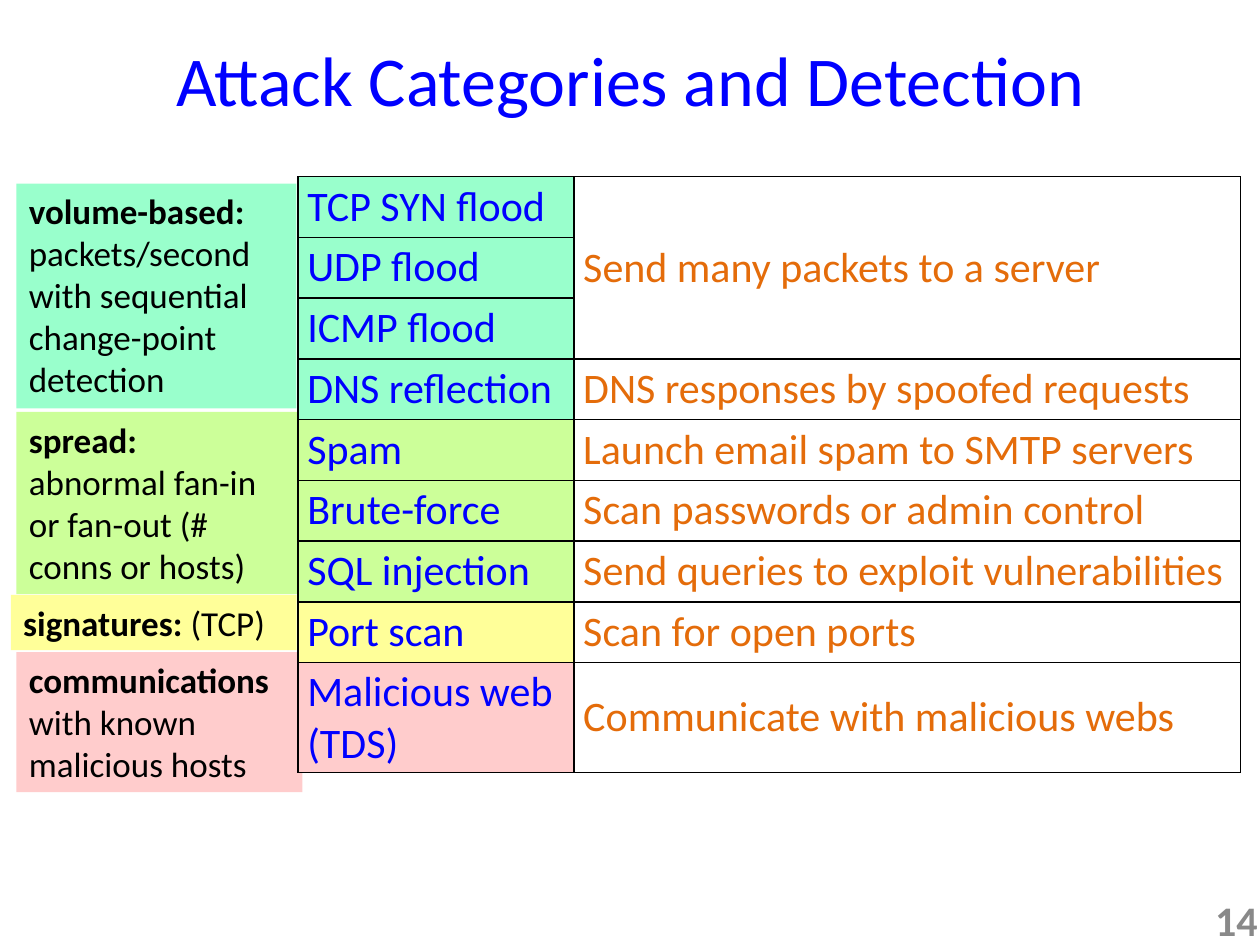
"""Build the slide on attack categories and how each is detected."""
from dataclasses import dataclass

from lxml import etree
from pptx import Presentation
from pptx.dml.color import RGBColor
from pptx.enum import text
from pptx.oxml import ns
from pptx.util import Pt


@dataclass(frozen=True)
class Theme:
    font: str = "Calibri"
    blue: str = "0000FF"
    orange: str = "E46C0A"
    black: str = "000000"
    grey: str = "898989"
    volume: str = "99FFCC"
    spread: str = "CCFF99"
    signature: str = "FFFF99"
    contact: str = "FFCCCC"
    title_size: int = 40
    table_size: int = 24
    method_size: int = 20


theme = Theme()


def style(paragraph, size, color, bold=None):
    paragraph.font.name = theme.font
    paragraph.font.size = Pt(size)
    paragraph.font.color.rgb = RGBColor.from_string(color)
    paragraph.font.bold = bold


def border(cell):
    properties = cell._tc.get_or_add_tcPr()
    for position, side in enumerate(("lnL", "lnR", "lnT", "lnB")):
        line = etree.Element(ns.qn(f"a:{side}"), w=str(Pt(1)))
        fill = etree.SubElement(line, ns.qn("a:solidFill"))
        etree.SubElement(fill, ns.qn("a:srgbClr"), val=theme.black)
        properties.insert(position, line)


deck = Presentation()
deck.slide_width, deck.slide_height = Pt(720), Pt(540)
slide = deck.slides.add_slide(deck.slide_layouts[5])

title = slide.shapes.title
title.left, title.top, title.width, title.height = Pt(0), Pt(0), Pt(720), Pt(90)
title.text_frame.text = "Attack Categories and Detection"
title.text_frame.vertical_anchor = text.MSO_ANCHOR.MIDDLE
title.text_frame.paragraphs[0].alignment = text.PP_ALIGN.CENTER
style(title.text_frame.paragraphs[0], theme.title_size, theme.blue)

methods = [
    (9.4, 105, 160, 128.4, theme.volume,
     [[("volume-based: ", True),
       ("packets/second with sequential change-point detection", False)]]),
    (9.4, 235.4, 163.4, 104.2, theme.spread,
     [[("spread:", True)], [("abnormal fan-in or fan-out (# conns or hosts)", False)]]),
    (6.2, 340, 163.4, 31.5, theme.signature,
     [[("signatures: ", True), ("(TCP)", False)]]),
    (9.4, 372.7, 163.4, 80, theme.contact,
     [[("communications ", True), ("with known malicious hosts", False)]]),
]
for left, top, width, height, color, lines in methods:
    method = slide.shapes.add_textbox(Pt(left), Pt(top), Pt(width), Pt(height))
    method.fill.solid()
    method.fill.fore_color.rgb = RGBColor.from_string(color)
    frame = method.text_frame
    frame.word_wrap = True
    frame.auto_size = text.MSO_AUTO_SIZE.SHAPE_TO_FIT_TEXT
    for index, line in enumerate(lines):
        paragraph = frame.add_paragraph() if index else frame.paragraphs[0]
        style(paragraph, theme.method_size, theme.black)
        for words, bold in line:
            run = paragraph.add_run()
            run.text = words
            run.font.bold = bold

attacks = [
    ("TCP SYN flood", "Send many packets to a server", theme.volume),
    ("UDP flood", "", theme.volume),
    ("ICMP flood", "", theme.volume),
    ("DNS reflection", "DNS responses by spoofed requests", theme.volume),
    ("Spam", "Launch email spam to SMTP servers", theme.spread),
    ("Brute-force", "Scan passwords or admin control", theme.spread),
    ("SQL injection", "Send queries to exploit vulnerabilities", theme.spread),
    ("Port scan", "Scan for open ports", theme.signature),
    ("Malicious web\n(TDS)", "Communicate with malicious webs", theme.contact),
]
table = slide.shapes.add_table(
    len(attacks), 2, Pt(170.4), Pt(101), Pt(538.6), Pt(336)).table
table.first_row = table.horz_banding = False
table.columns[0].width, table.columns[1].width = Pt(157.7), Pt(380.9)
for index, (attack, behavior, color) in enumerate(attacks):
    table.rows[index].height = Pt(58.4 if "\n" in attack else 34.7)
    name_cell, behavior_cell = table.cell(index, 0), table.cell(index, 1)
    for cell, words, ink in ((name_cell, attack, theme.blue),
                             (behavior_cell, behavior, theme.orange)):
        cell.text = words
        cell.margin_left = cell.margin_right = Pt(5.2)
        cell.margin_top = cell.margin_bottom = Pt(2.6)
        for paragraph in cell.text_frame.paragraphs:
            style(paragraph, theme.table_size, ink)
        border(cell)
    name_cell.fill.solid()
    name_cell.fill.fore_color.rgb = RGBColor.from_string(color)
    behavior_cell.fill.background()
    behavior_cell.vertical_anchor = text.MSO_ANCHOR.MIDDLE
table.cell(0, 1).merge(table.cell(2, 1))

page_number = slide.shapes.add_textbox(Pt(550.8), Pt(511.2), Pt(167.8), Pt(28.8))
page_number.text_frame.word_wrap = True
page_number.text_frame.margin_right = Pt(0)
page_number.text_frame.vertical_anchor = text.MSO_ANCHOR.MIDDLE
page_number.text_frame.text = "14"
page_number.text_frame.paragraphs[0].alignment = text.PP_ALIGN.RIGHT
style(page_number.text_frame.paragraphs[0], theme.table_size, theme.grey, True)

deck.save("out.pptx")
